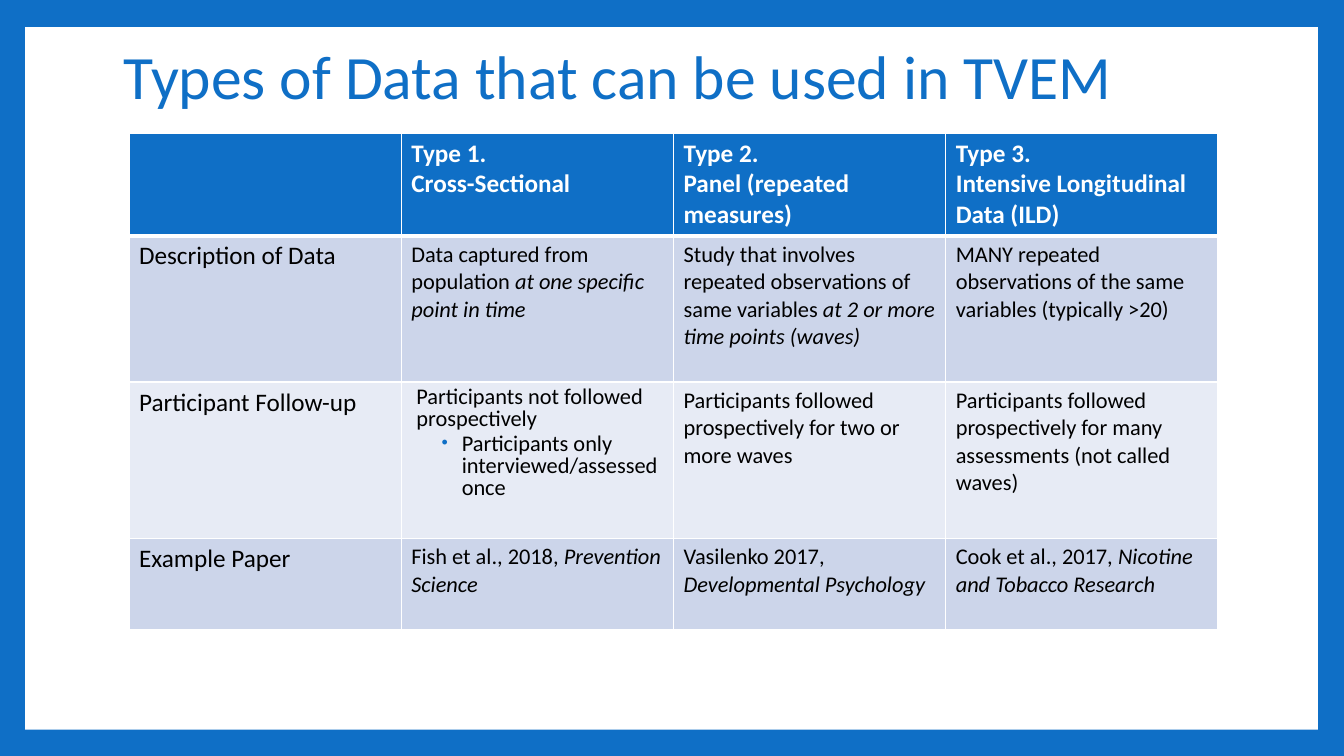
from dataclasses import dataclass

from lxml import etree
from pptx import Presentation
from pptx import util as u
from pptx.dml.color import RGBColor
from pptx.enum import shapes, text
from pptx.oxml.ns import qn

BLUE, WHITE, BLACK = "0F6FC6", "FFFFFF", "000000"
DARK_BAND, LIGHT_BAND = "CCD5EA", "E7EBF5"
FONT = "Calibri"


@dataclass
class Row:
    height: float
    fill: str
    cells: list[str]  # a new line starts a paragraph, asterisks enclose italics


ROWS = [
    Row(1.02, BLUE, [
        "",
        "Type 1.\nCross-Sectional",
        "Type 2.\nPanel (repeated measures)",
        "Type 3.\nIntensive Longitudinal Data (ILD)",
    ]),
    Row(1.45, DARK_BAND, [
        "Description of Data",
        "Data captured from population *at one specific point in time*",
        "Study that involves repeated observations of same variables "
        "*at 2 or more time points (waves)*",
        "MANY repeated observations of the same variables (typically >20)",
    ]),
    Row(1.55, LIGHT_BAND, [
        "Participant Follow-up",
        "Participants not followed prospectively\n"
        "Participants only interviewed/assessed once",
        "Participants followed prospectively for two or more waves",
        "Participants followed prospectively for many assessments (not called waves)",
    ]),
    Row(0.91, DARK_BAND, [
        "Example Paper",
        "Fish et al., 2018, *Prevention Science*",
        "Vasilenko 2017, *Developmental Psychology*",
        "Cook et al., 2017, *Nicotine and Tobacco Research*",
    ]),
]


def color(value: str) -> RGBColor:
    return RGBColor.from_string(value)


def paint(fill, value: str) -> None:
    fill.solid()
    fill.fore_color.rgb = color(value)


def write(frame, content: str, *, size: float, ink: str = BLACK,
          bold: bool = False, spacing: float = 1.0) -> None:
    for index, line in enumerate(content.split("\n")):
        para = frame.paragraphs[0] if index == 0 else frame.add_paragraph()
        para.line_spacing = spacing
        for part, words in enumerate(line.split("*")):
            if not words:
                continue
            span = para.add_run()
            span.text = words
            span.font.name = FONT
            span.font.size = u.Pt(size)
            span.font.bold = bold
            span.font.italic = part % 2 == 1
            span.font.color.rgb = color(ink)


def add_borders(cell, widths: dict[str, float]) -> None:
    properties = cell._tc.get_or_add_tcPr()
    for side, width in widths.items():
        line = etree.SubElement(properties, qn(f"a:ln{side}"), w=str(u.Pt(width)))
        solid = etree.SubElement(line, qn("a:solidFill"))
        etree.SubElement(solid, qn("a:srgbClr"), val=WHITE)


def indent(para, left: float, first: float = 0) -> None:
    properties = para._p.get_or_add_pPr()
    properties.set("marL", str(u.Inches(left)))
    properties.set("indent", str(u.Inches(first)))


def add_bullet(para) -> None:
    properties = para._p.get_or_add_pPr()
    tint = etree.SubElement(properties, qn("a:buClr"))
    etree.SubElement(tint, qn("a:srgbClr"), val=BLUE)
    etree.SubElement(properties, qn("a:buSzPct"), val="80000")
    etree.SubElement(properties, qn("a:buFont"), typeface="Arial")
    etree.SubElement(properties, qn("a:buChar"), char="•")


def add_frame(page) -> None:
    paint(page.background.fill, BLUE)
    panel = page.shapes.add_shape(
        shapes.MSO_SHAPE.RECTANGLE,
        u.Inches(0.25), u.Inches(0.27), u.Inches(12.82), u.Inches(6.97))
    panel.shadow.inherit = False
    paint(panel.fill, WHITE)
    panel.line.fill.background()


def add_title(page) -> None:
    box = page.shapes.add_textbox(
        u.Inches(1.13), u.Inches(0.19), u.Inches(10.8), u.Inches(1.2))
    box.text_frame.word_wrap = True
    box.text_frame.vertical_anchor = text.MSO_ANCHOR.MIDDLE
    write(box.text_frame, "Types of Data that can be used in TVEM",
          size=44, ink=BLUE, spacing=0.9)


def add_data_table(page) -> None:
    height = sum(row.height for row in ROWS)
    table = page.shapes.add_table(
        len(ROWS), len(ROWS[0].cells),
        u.Inches(1.28), u.Inches(1.32), u.Inches(10.8), u.Inches(height)).table
    table.horz_banding = False
    for r, row in enumerate(ROWS):
        table.rows[r].height = u.Inches(row.height)
        header = r == 0
        for c, content in enumerate(row.cells):
            cell = table.cell(r, c)
            add_borders(cell, {"L": 1, "R": 1, "T": 3 if r == 1 else 1,
                               "B": 3 if header else 1})
            paint(cell.fill, row.fill)
            write(cell.text_frame, content, size=18 if header or c == 0 else 16,
                  ink=WHITE if header else BLACK, bold=header)

    # The cross-sectional follow-up cell holds a tight bulleted list
    lead, detail = table.cell(2, 1).text_frame.paragraphs
    lead.line_spacing = detail.line_spacing = 0.8
    indent(lead, 0.05)
    detail.level = 1
    detail.space_before, detail.space_after = u.Pt(2), u.Pt(4)
    indent(detail, 0.5, -0.2)
    add_bullet(detail)


def main() -> None:
    deck = Presentation()
    deck.slide_width, deck.slide_height = u.Inches(13.33), u.Inches(7.5)
    page = deck.slides.add_slide(deck.slide_layouts[6])
    add_frame(page)
    add_title(page)
    add_data_table(page)
    deck.save("out.pptx")


if __name__ == "__main__":
    main()
